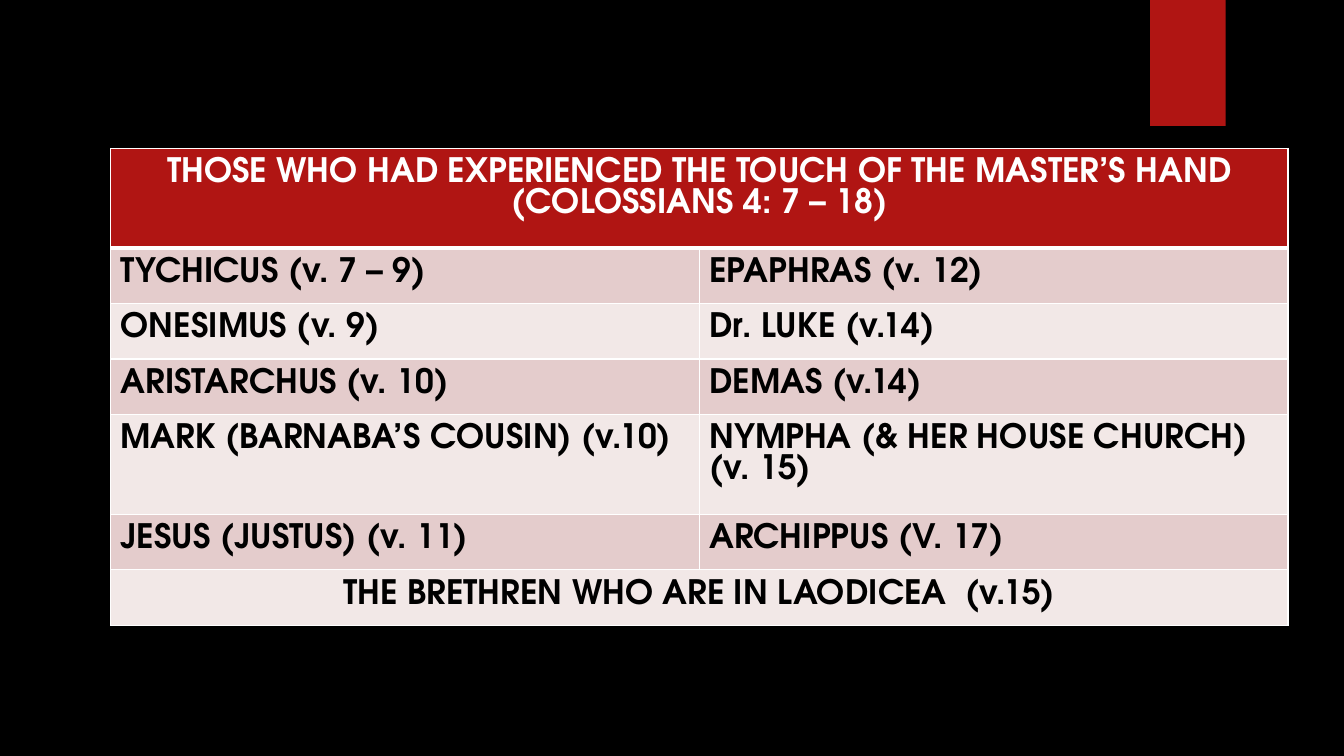
from lxml import etree
from pptx import Presentation
from pptx.dml.color import RGBColor
from pptx.enum.shapes import MSO_SHAPE
from pptx.enum.text import PP_ALIGN
from pptx.oxml.ns import qn
from pptx.util import Pt

RECTANGLE = MSO_SHAPE.RECTANGLE
LEFT, CENTER = PP_ALIGN.LEFT, PP_ALIGN.CENTER
FONT = "TeX Gyre Adventor"
COLORS = {
    "background": "000000",
    "accent": "B01513",
    "dark_band": "E4CCCC",
    "light_band": "F2E8E7",
    "heading": "FFFFFF",
    "name": "000000",
    "border": "FFFFFF",
}
HEADING = "THOSE WHO HAD EXPERIENCED THE TOUCH OF THE MASTER’S HAND (COLOSSIANS 4: 7 – 18)"
COMPANIONS = [
    ("TYCHICUS (v. 7 – 9)", "EPAPHRAS (v. 12)"),
    ("ONESIMUS (v. 9)", "Dr. LUKE (v.14)"),
    ("ARISTARCHUS (v. 10)", "DEMAS (v.14)"),
    ("MARK (BARNABA’S COUSIN) (v.10)", "NYMPHA (& HER HOUSE CHURCH) (v. 15)"),
    ("JESUS (JUSTUS) (v. 11)", "ARCHIPPUS (V. 17)"),
]
BRETHREN = "THE BRETHREN WHO ARE IN LAODICEA  (v.15)"
ROWS = [(HEADING,), *COMPANIONS, (BRETHREN,)]
TALL_ROWS = (0, 4)
TALL, SHORT = 71.3, 39.6


def color(key):
    return RGBColor.from_string(COLORS[key])


def add_borders(cell, widths):
    properties = cell._tc.get_or_add_tcPr()
    for side, width in widths.items():
        line = etree.SubElement(properties, qn(f"a:ln{side}"), w=str(Pt(width)))
        fill = etree.SubElement(line, qn("a:solidFill"))
        etree.SubElement(fill, qn("a:srgbClr"), val=COLORS["border"])


def format_cell(cell, band, top, bottom):
    add_borders(cell, {"L": 1, "R": 1, "T": top, "B": bottom})
    cell.fill.solid()
    cell.fill.fore_color.rgb = color(band)
    cell.margin_left = cell.margin_right = Pt(7.2)
    cell.margin_top, cell.margin_bottom = Pt(7), Pt(3.6)


def write_cell(cell, wording, ink, alignment):
    cell.text_frame.text = wording
    paragraph = cell.text_frame.paragraphs[0]
    paragraph.alignment = alignment
    paragraph.line_spacing = Pt(22)
    font = paragraph.runs[0].font
    font.name, font.size, font.bold = FONT, Pt(24), True
    font.color.rgb = color(ink)


def add_ribbon(slide, left, top, width, height):
    ribbon = slide.shapes.add_shape(RECTANGLE, Pt(left), Pt(top), Pt(width), Pt(height))
    ribbon.shadow.inherit = False
    ribbon.fill.solid()
    ribbon.fill.fore_color.rgb = color("accent")
    ribbon.line.fill.background()


def add_companions(slide, left, top, width):
    heights = [TALL if row in TALL_ROWS else SHORT for row in range(len(ROWS))]
    companions = slide.shapes.add_table(
        len(ROWS), 2, Pt(left), Pt(top), Pt(width), Pt(sum(heights))
    ).table
    for column in companions.columns:
        column.width = Pt(width / 2)
    for row, wordings in enumerate(ROWS):
        companions.rows[row].height = Pt(heights[row])
        band = "accent" if row == 0 else ("dark_band" if row % 2 else "light_band")
        for cell in companions.rows[row].cells:
            format_cell(cell, band, 3 if row == 1 else 1, 3 if row == 0 else 1)
        spans = len(wordings) == 1
        if spans:
            companions.cell(row, 0).merge(companions.cell(row, 1))
        for column, wording in enumerate(wordings):
            write_cell(
                companions.cell(row, column),
                wording,
                "heading" if row == 0 else "name",
                CENTER if spans else LEFT,
            )


def build_slide(deck):
    slide = deck.slides.add_slide(deck.slide_layouts[6])
    slide.background.fill.solid()
    slide.background.fill.fore_color.rgb = color("background")
    add_ribbon(slide, 821.5, 0, 54, 90)
    add_companions(slide, 79, 106, 841)


def main():
    deck = Presentation()
    deck.slide_width, deck.slide_height = Pt(960), Pt(540)
    build_slide(deck)
    deck.save("out.pptx")


if __name__ == "__main__":
    main()
